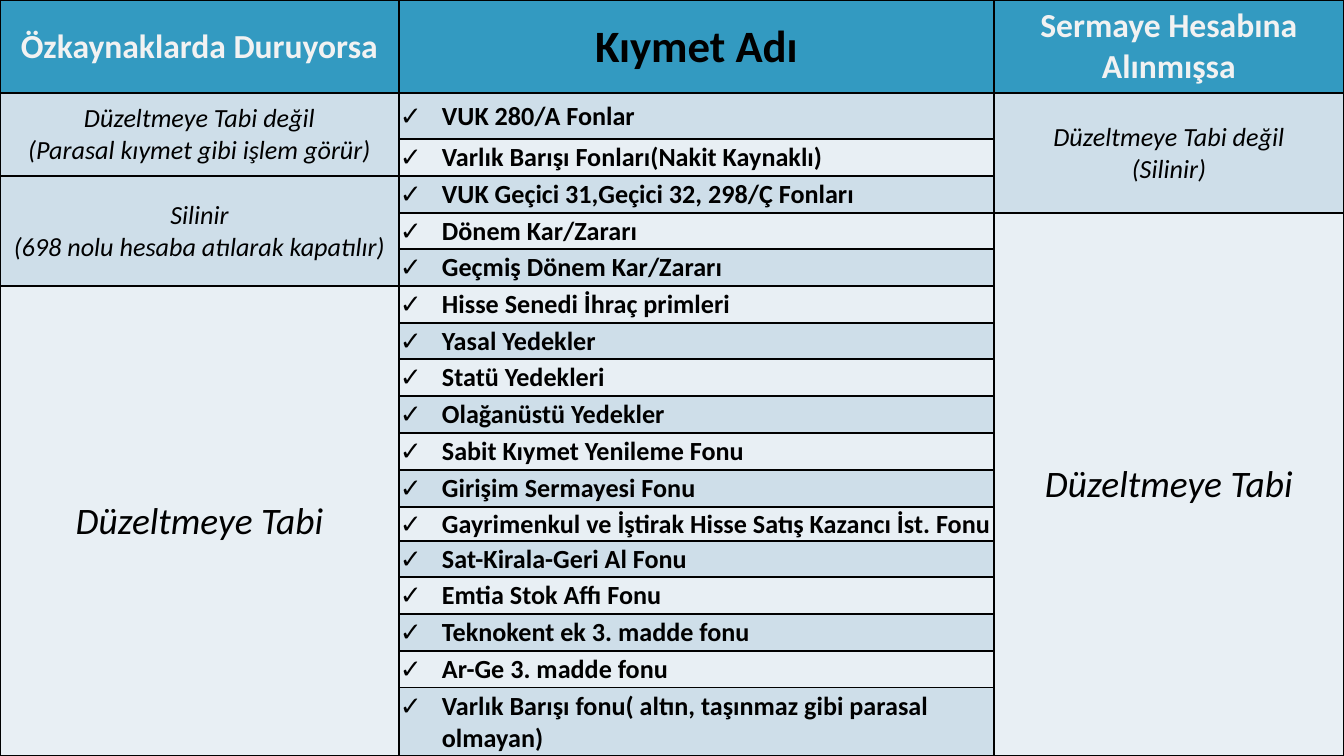
from pptx import Presentation
from pptx.dml.color import RGBColor
from pptx.enum.text import MSO_ANCHOR, PP_ALIGN
from pptx.oxml.ns import qn
from pptx.util import Emu, Pt
from lxml.etree import SubElement

BLACK = RGBColor(0x00, 0x00, 0x00)
OFF_WHITE = RGBColor(0xF2, 0xF2, 0xF2)
HEADER_BLUE = RGBColor(0x33, 0x9A, 0xC1)
BAND_DARK = RGBColor(0xCE, 0xDE, 0xE9)
BAND_LIGHT = RGBColor(0xE8, 0xEF, 0xF4)

FONT = "Calibri"
SLIDE_WIDTH, SLIDE_HEIGHT = 1344, 756
COLUMN_WIDTHS = (399, 595, 350)
HEADER_HEIGHT = 93
INDENT = 42

HEADERS = [
    ("Özkaynaklarda Duruyorsa", 18, OFF_WHITE),
    ("Kıymet Adı", 24, BLACK),
    ("Sermaye Hesabına Alınmışsa", 18, OFF_WHITE),
]
ITEMS = [
    ("VUK 280/A Fonlar", 46),
    ("Varlık Barışı Fonları(Nakit Kaynaklı)", 37),
    ("VUK Geçici 31,Geçici 32, 298/Ç Fonları", 37),
    ("Dönem Kar/Zararı", 36),
    ("Geçmiş Dönem Kar/Zararı", 37),
    ("Hisse Senedi İhraç primleri", 37),
    ("Yasal Yedekler", 36),
    ("Statü Yedekleri", 37),
    ("Olağanüstü Yedekler", 37),
    ("Sabit Kıymet Yenileme Fonu", 37),
    ("Girişim Sermayesi Fonu", 37),
    ("Gayrimenkul ve İştirak Hisse Satış Kazancı İst. Fonu", 34),
    ("Sat-Kirala-Geri Al Fonu", 36),
    ("Emtia Stok Affı Fonu", 37),
    ("Teknokent ek 3. madde fonu", 37),
    ("Ar-Ge 3. madde fonu", 37),
    ("Varlık Barışı fonu( altın, taşınmaz gibi parasal olmayan)", 68),
]
TREATMENTS = [
    (0, 1, 2, ["Düzeltmeye Tabi değil", "(Parasal kıymet gibi işlem görür)"], 14, BAND_DARK),
    (0, 3, 5, ["Silinir", "(698 nolu hesaba atılarak kapatılır)"], 14, BAND_DARK),
    (0, 6, 17, ["Düzeltmeye Tabi"], 20, BAND_LIGHT),
    (2, 1, 3, ["Düzeltmeye Tabi değil", "(Silinir)"], 14, BAND_DARK),
    (2, 4, 17, ["Düzeltmeye Tabi"], 20, BAND_LIGHT),
]


def px(length):
    return Emu(round(length * 914400 / 134.4))


def paint_cell(cell, color):
    cell.margin_left = cell.margin_right = cell.margin_top = px(1)
    cell.margin_bottom = 0
    cell.vertical_anchor = MSO_ANCHOR.MIDDLE
    properties = cell._tc.get_or_add_tcPr()
    for side in ("a:lnL", "a:lnR", "a:lnT", "a:lnB"):
        border = SubElement(properties, qn(side), w=str(Pt(1)))
        fill = SubElement(border, qn("a:solidFill"))
        SubElement(fill, qn("a:srgbClr"), val=str(BLACK))
    cell.fill.solid()
    cell.fill.fore_color.rgb = color


def add_bullet(para):
    properties = para._p.get_or_add_pPr()
    properties.set("marL", str(px(INDENT)))
    properties.set("indent", str(-px(INDENT)))
    SubElement(properties, qn("a:buFont"), typeface="Arial")
    SubElement(properties, qn("a:buChar"), char="✓")


def write_cell(cell, lines, size, color=BLACK, bold=False, italic=False, bullet=False):
    cell.text_frame.text = "\n".join(lines)
    for para in cell.text_frame.paragraphs:
        if bullet:
            add_bullet(para)
        para.alignment = PP_ALIGN.LEFT if bullet else PP_ALIGN.CENTER
        font = para.font
        font.name, font.size = FONT, Pt(size)
        font.bold, font.italic = bold, italic
        font.color.rgb = color


deck = Presentation()
deck.slide_width, deck.slide_height = px(SLIDE_WIDTH), px(SLIDE_HEIGHT)
page = deck.slides.add_slide(deck.slide_layouts[6])

table = page.shapes.add_table(
    len(ITEMS) + 1, len(COLUMN_WIDTHS), 0, 0, px(SLIDE_WIDTH), px(SLIDE_HEIGHT)
).table
table.first_row = table.horz_banding = False
for column, width in zip(table.columns, COLUMN_WIDTHS):
    column.width = px(width)
row_heights = [HEADER_HEIGHT] + [height for _, height in ITEMS]
for row, height in zip(table.rows, row_heights):
    row.height = px(height)

for column, (title, size, color) in enumerate(HEADERS):
    cell = table.cell(0, column)
    paint_cell(cell, HEADER_BLUE)
    write_cell(cell, [title], size, color, bold=True)

for row, (item, _) in enumerate(ITEMS, start=1):
    cell = table.cell(row, 1)
    paint_cell(cell, BAND_DARK if row % 2 else BAND_LIGHT)
    write_cell(cell, [item], 14, bold=True, bullet=True)

for column, first, last, lines, size, color in TREATMENTS:
    for row in range(first, last + 1):
        paint_cell(table.cell(row, column), color)
    top_cell = table.cell(first, column)
    top_cell.merge(table.cell(last, column))
    write_cell(top_cell, lines, size, italic=True)

deck.save("out.pptx")
